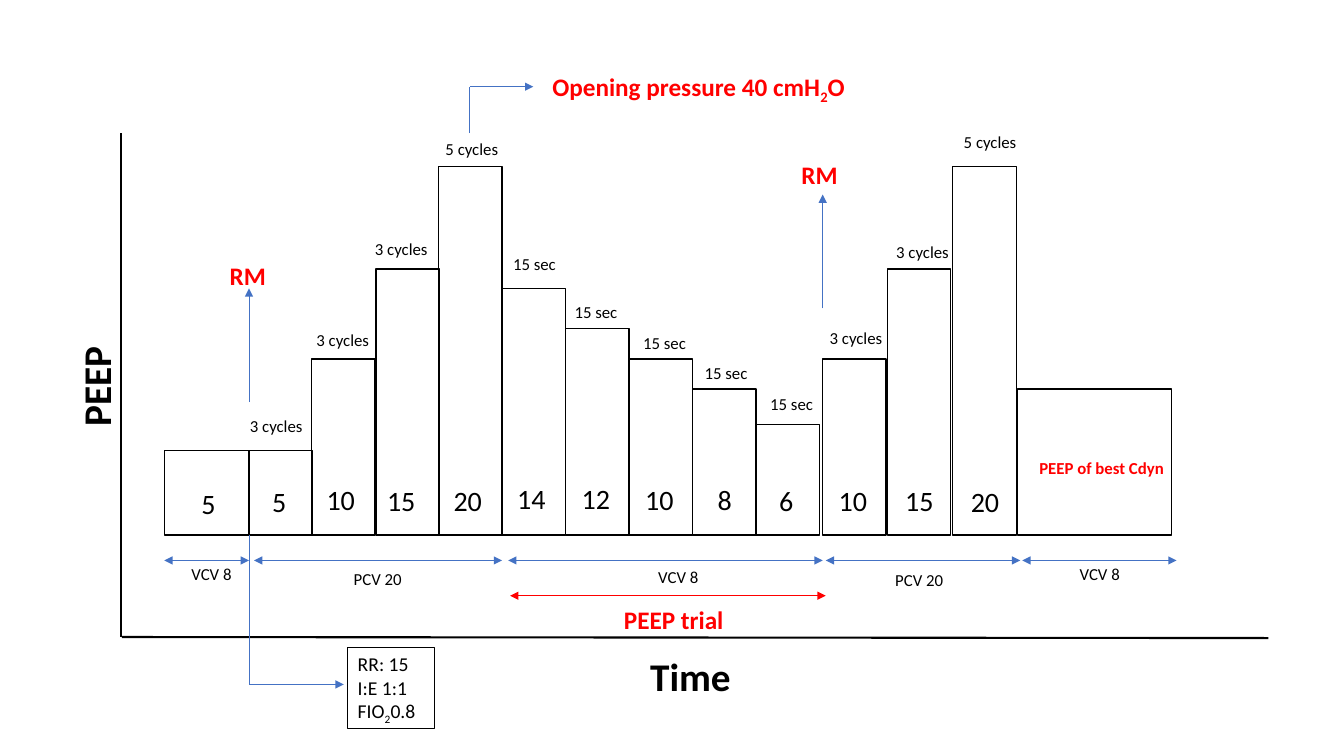
from dataclasses import dataclass

from lxml import etree
from pptx import Presentation
from pptx.dml.color import RGBColor
from pptx.enum import shapes, text
from pptx.oxml import ns
from pptx.util import Inches, Pt


@dataclass(frozen=True)
class Theme:
    font: str = "Calibri"
    ink: RGBColor = RGBColor(0, 0, 0)
    accent: RGBColor = RGBColor(0xFF, 0, 0)
    arrow: RGBColor = RGBColor(0x44, 0x72, 0xC4)
    small: int = 12
    note: int = 14
    heading: int = 18
    pressure: int = 20
    axis: int = 28


THEME = Theme()
BASELINE = 5.31
STEP_WIDTH = 0.63

# left, top, pressure, pressure position, duration, duration position
STEPS = [
    (2.47, 4.47, "5", (2.6, 4.76), "3 cycles", (2.38, 4.08)),
    (3.09, 3.56, "10", (3.14, 4.74), "3 cycles", (3.04, 3.22)),
    (3.73, 2.67, "15", (3.74, 4.75), "3 cycles", (3.62, 2.32)),
    (4.35, 1.65, "20", (4.4, 4.75), "5 cycles", (4.32, 1.33)),
    (4.98, 2.86, "14", (5.03, 4.73), "15 sec", (4.99, 2.47)),
    (5.61, 3.26, "12", (5.67, 4.73), "15 sec", (5.6, 2.94)),
    (6.24, 3.56, "10", (6.3, 4.74), "15 sec", (6.28, 3.25)),
    (6.87, 3.86, "8", (7.02, 4.74), "15 sec", (6.89, 3.55)),
    (7.5, 4.21, "6", (7.63, 4.75), "15 sec", (7.54, 3.86)),
    (8.16, 3.56, "10", (8.22, 4.75), "3 cycles", (8.13, 3.2)),
    (8.8, 2.67, "15", (8.88, 4.75), "3 cycles", (8.79, 2.35)),
    (9.45, 1.65, "20", (9.53, 4.76), "5 cycles", (9.46, 1.26)),
]

# start, end, ventilation mode, mode position
MODES = [
    (1.63, 2.47, "VCV 8", (1.8, 5.54)),
    (2.52, 4.98, "PCV 20", (3.41, 5.59)),
    (5.04, 8.16, "VCV 8", (6.43, 5.57)),
    (8.19, 10.12, "PCV 20", (8.78, 5.6)),
    (10.14, 11.67, "VCV 8", (10.61, 5.54)),
]


def add_text(slide, content, at, width=0.89, height=0.3, size=THEME.small,
             color=THEME.ink, bold=False, rotation=0, border=None):
    """Add a text box; a part between underscores is set as subscript."""
    box = slide.shapes.add_textbox(*map(Inches, (*at, width, height)))
    box.rotation = rotation
    if border:
        box.line.color.rgb = THEME.ink
        box.line.width = Pt(border)
    frame = box.text_frame
    frame.word_wrap = True
    frame.auto_size = text.MSO_AUTO_SIZE.SHAPE_TO_FIT_TEXT
    for index, line in enumerate(content.split("\n")):
        paragraph = frame.add_paragraph() if index else frame.paragraphs[0]
        for position, part in enumerate(line.split("_")):
            run = paragraph.add_run()
            run.text = part
            run.font.name = THEME.font
            run.font.size = Pt(size)
            run.font.bold = bold
            run.font.color.rgb = color
            if position % 2:
                run.font._element.set("baseline", "-25000")


def add_bar(slide, left, top, width=STEP_WIDTH):
    bar = slide.shapes.add_shape(
        shapes.MSO_SHAPE.RECTANGLE,
        *map(Inches, (left, top, width, BASELINE - top)))
    bar.shadow.inherit = False
    bar.fill.background()
    bar.line.color.rgb = THEME.ink
    bar.line.width = Pt(1)


def add_line(slide, start, end, color=THEME.arrow, width=0.5, heads=()):
    """Add a line; heads lists its arrow ends, headEnd being the start."""
    line = slide.shapes.add_connector(
        shapes.MSO_CONNECTOR.STRAIGHT, *map(Inches, (*start, *end)))
    line.line.color.rgb = color
    line.line.width = Pt(width)
    outline = line.line._get_or_add_ln()
    for head in heads:
        etree.SubElement(outline, ns.qn(f"a:{head}"), type="triangle")
    etree.SubElement(line._element.spPr, ns.qn("a:effectLst"))


def add_span(slide, start, end, y, color=THEME.arrow):
    add_line(slide, (start, y), (end, y), color, heads=("headEnd", "tailEnd"))


def add_axes(slide):
    add_line(slide, (1.2, 1.32), (1.2, 6.32), THEME.ink, 2)
    add_line(slide, (1.21, 6.32), (12.58, 6.33), THEME.ink, 1.5)
    for title, at, rotation in (("PEEP", (0.1, 3.19), 270),
                                ("Time", (6.35, 6.42), 0)):
        add_text(slide, title, at, 1.7, 0.57, size=THEME.axis, bold=True,
                 rotation=rotation)


def add_steps(slide):
    add_bar(slide, 1.63, 4.47, 0.84)
    add_text(slide, "5", (1.9, 4.78), 0.44, 0.44, size=THEME.pressure)
    for left, top, pressure, pressure_at, duration, duration_at in STEPS:
        add_bar(slide, left, top)
        add_text(slide, pressure, pressure_at, 0.59, 0.44, size=THEME.pressure)
        add_text(slide, duration, duration_at)
    add_bar(slide, 10.09, 3.86, 1.53)
    add_text(slide, "PEEP of best Cdyn", (10.21, 4.49), 1.6,
             color=THEME.accent, bold=True)


def add_modes(slide):
    for start, end, mode, mode_at in MODES:
        add_span(slide, start, end, 5.56)
        add_text(slide, mode, mode_at)
    add_span(slide, 5.06, 8.19, 5.91, THEME.accent)


def add_callouts(slide):
    tail = ("tailEnd",)
    add_line(slide, (2.47, 3.99), (2.47, 2.86), heads=tail)
    add_line(slide, (8.16, 3.06), (8.16, 1.93), heads=tail)
    add_line(slide, (4.66, 1.32), (4.66, 0.86))
    add_line(slide, (4.66, 0.86), (5.29, 0.86), heads=tail)
    add_line(slide, (2.47, BASELINE), (2.47, 6.79))
    add_line(slide, (2.47, 6.79), (3.41, 6.79), heads=tail)
    for heading, at, width in (("RM", (2.18, 2.53), 0.89),
                               ("RM", (7.85, 1.53), 0.89),
                               ("Opening pressure 40 cmH_2_O", (5.38, 0.66), 4.5),
                               ("PEEP trial", (6.09, 5.95), 1.76)):
        add_text(slide, heading, at, width, 0.4, size=THEME.heading,
                 color=THEME.accent, bold=True)
    add_text(slide, "RR: 15\nI:E 1:1\nFIO_2_0.8", (3.45, 6.42), 0.86, 0.81,
             size=THEME.note, border=0.75)


def main():
    deck = Presentation()
    deck.slide_width, deck.slide_height = Inches(13.33), Inches(7.5)
    slide = deck.slides.add_slide(deck.slide_layouts[6])
    add_axes(slide)
    add_steps(slide)
    add_modes(slide)
    add_callouts(slide)
    deck.save("out.pptx")


if __name__ == "__main__":
    main()
